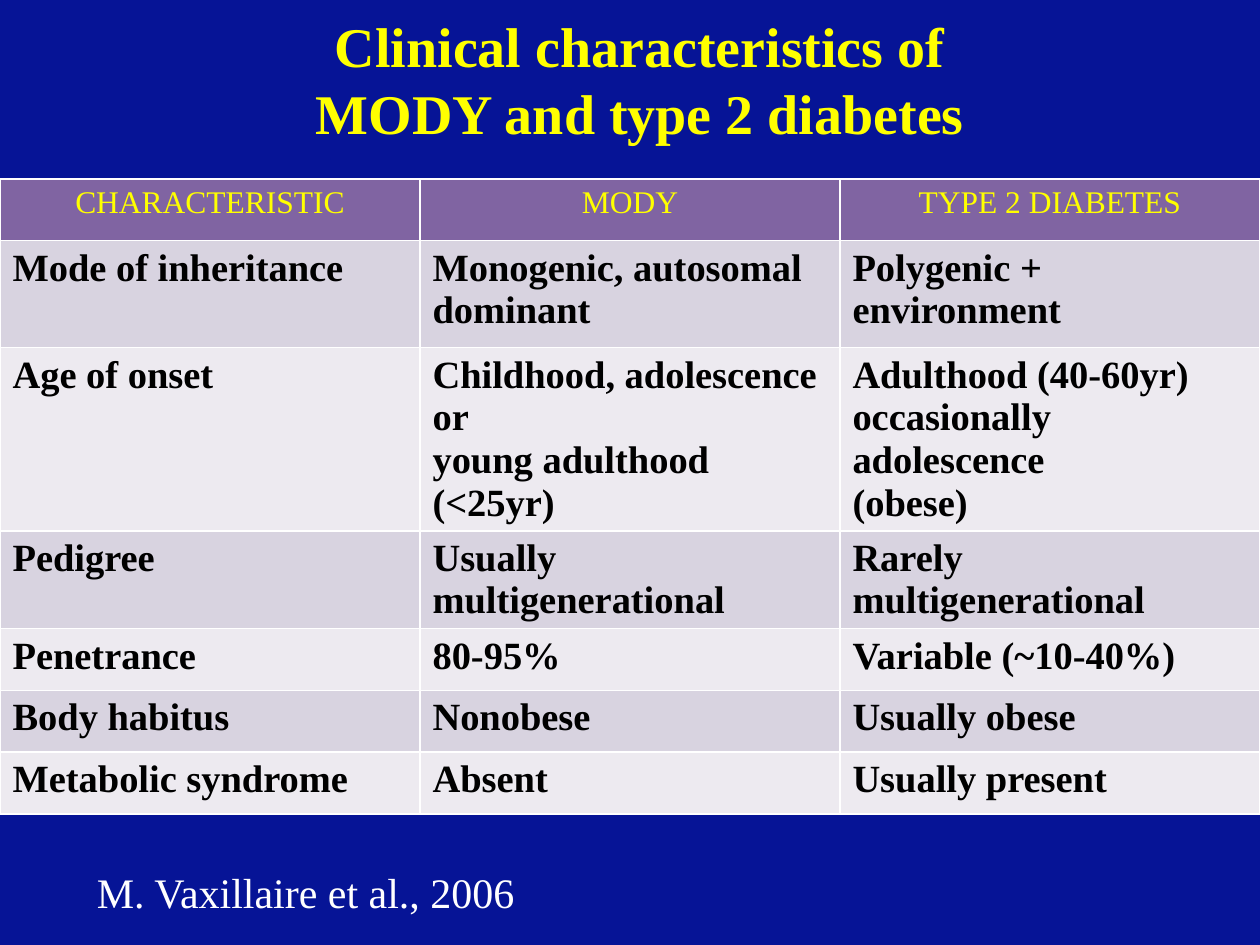
from pptx import Presentation
from pptx.dml.color import RGBColor
from pptx.enum import text
from pptx.util import Inches, Pt

FONT = "Times New Roman"
COLORS = {
    "background": "061496",
    "yellow": "FFFF00",
    "white": "FFFFFF",
    "black": "000000",
    "header": "8064A2",
    "odd_row": "D8D3E0",
    "even_row": "EDEAF0",
}
ROWS = [
    ("CHARACTERISTIC", "MODY", "TYPE 2 DIABETES"),
    ("Mode of inheritance", "Monogenic, autosomal dominant", "Polygenic + environment"),
    ("Age of onset", "Childhood, adolescence or\nyoung adulthood (<25yr)",
     "Adulthood (40-60yr)\noccasionally adolescence\n(obese)"),
    ("Pedigree", "Usually multigenerational", "Rarely multigenerational"),
    ("Penetrance", "80-95%", "Variable (~10-40%)"),
    ("Body habitus", "Nonobese", "Usually obese"),
    ("Metabolic syndrome", "Absent", "Usually present"),
]
ROW_HEIGHT = 0.49
TALL_ROWS = {1: 0.85, 2: 1.21}


def color(name):
    return RGBColor.from_string(COLORS[name])


def format_text(text_frame, size, color_name, bold=False, align=text.PP_ALIGN.LEFT):
    for paragraph in text_frame.paragraphs:
        paragraph.alignment = align
        for run in paragraph.runs:
            run.font.name = FONT
            run.font.size = Pt(size)
            run.font.bold = bold
            run.font.color.rgb = color(color_name)


def add_title(slide, wording):
    title = slide.shapes.title
    title.left, title.top = Inches(0.58), Inches(0)
    title.width, title.height = Inches(9), Inches(1.25)
    text_frame = title.text_frame
    text_frame.text = wording
    text_frame.auto_size = text.MSO_AUTO_SIZE.NONE
    text_frame.vertical_anchor = text.MSO_ANCHOR.MIDDLE
    format_text(text_frame, 32, "yellow", bold=True, align=text.PP_ALIGN.CENTER)


def add_comparison_table(slide):
    heights = [TALL_ROWS.get(index, ROW_HEIGHT) for index in range(len(ROWS))]
    table = slide.shapes.add_table(
        len(ROWS), len(ROWS[0]), Inches(0), Inches(1.42), Inches(10), Inches(sum(heights))
    ).table
    for row_index, (wordings, height) in enumerate(zip(ROWS, heights)):
        table.rows[row_index].height = Inches(height)
        for column_index, wording in enumerate(wordings):
            cell = table.cell(row_index, column_index)
            cell.text_frame.text = wording
            cell.fill.solid()
            if row_index == 0:
                cell.fill.fore_color.rgb = color("header")
                format_text(cell.text_frame, 18, "yellow", align=text.PP_ALIGN.CENTER)
            else:
                cell.fill.fore_color.rgb = color("odd_row" if row_index % 2 else "even_row")
                format_text(cell.text_frame, 22, "black", bold=True)


def add_citation(slide, wording):
    box = slide.shapes.add_textbox(Inches(0.67), Inches(6.83), Inches(3.63), Inches(0.5))
    text_frame = box.text_frame
    text_frame.text = wording
    text_frame.word_wrap = False
    text_frame.auto_size = text.MSO_AUTO_SIZE.SHAPE_TO_FIT_TEXT
    format_text(text_frame, 24, "white")


def main():
    presentation = Presentation()
    presentation.slide_width, presentation.slide_height = Inches(10), Inches(7.5)
    slide = presentation.slides.add_slide(presentation.slide_layouts[5])
    slide.background.fill.solid()
    slide.background.fill.fore_color.rgb = color("background")
    add_title(slide, "Clinical characteristics of\vMODY and type 2 diabetes")
    add_comparison_table(slide)
    add_citation(slide, "M. Vaxillaire et al., 2006")
    presentation.save("out.pptx")


if __name__ == "__main__":
    main()
